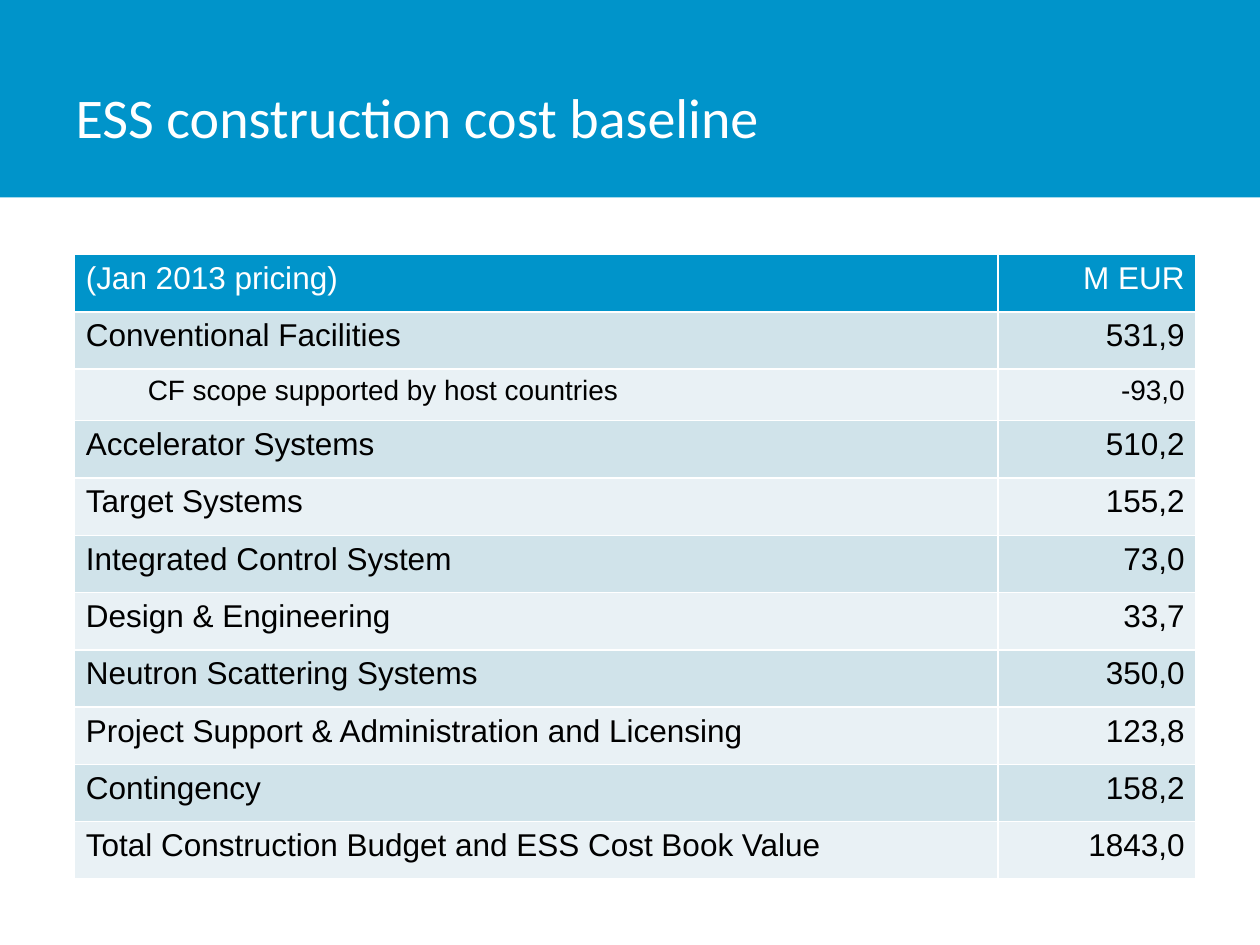
from lxml import etree
from pptx import Presentation
from pptx.dml.color import RGBColor
from pptx.enum import shapes, text
from pptx.oxml import ns
from pptx.util import Cm, Pt

COLORS = {
    "brand": "0094CA",
    "band_dark": "D0E3EA",
    "band_light": "E9F1F5",
    "white": "FFFFFF",
    "black": "000000",
}

COSTS = [
    ("(Jan 2013 pricing)", "M EUR"),
    ("Conventional Facilities", "531,9"),
    ("CF scope supported by host countries", "-93,0"),
    ("Accelerator Systems", "510,2"),
    ("Target Systems", "155,2"),
    ("Integrated Control System", "73,0"),
    ("Design & Engineering", "33,7"),
    ("Neutron Scattering Systems", "350,0"),
    ("Project Support & Administration and Licensing", "123,8"),
    ("Contingency", "158,2"),
    ("Total Construction Budget and ESS Cost Book Value", "1843,0"),
]
SUB_ITEM = 2
TABLE_HEIGHT = 12.59
SUB_HEIGHT = 1.04
ROW_HEIGHT = (TABLE_HEIGHT - SUB_HEIGHT) / (len(COSTS) - 1)


def rgb(name):
    return RGBColor.from_string(COLORS[name])


def add_borders(cell, name, width):
    """Line all four sides of a cell; call before filling it."""
    properties = cell._tc.get_or_add_tcPr()
    for side in ("lnL", "lnR", "lnT", "lnB"):
        line = etree.SubElement(properties, ns.qn(f"a:{side}"), w=str(width))
        fill = etree.SubElement(line, ns.qn("a:solidFill"))
        etree.SubElement(fill, ns.qn("a:srgbClr"), val=COLORS[name])


prs = Presentation()
prs.slide_width, prs.slide_height = Cm(25.4), Cm(19.05)
slide = prs.slides.add_slide(prs.slide_layouts[5])

# Title on its coloured band
band = slide.shapes.add_shape(
    shapes.MSO_SHAPE.RECTANGLE, 0, 0, prs.slide_width, Cm(3.98))
band.shadow.inherit = False
band.fill.solid()
band.fill.fore_color.rgb = rgb("brand")
band.line.fill.background()

title = slide.shapes.title
band._element.addnext(title._element)  # title in front of the band
title.left, title.top, title.width, title.height = Cm(1.27), Cm(0.76), Cm(19.84), Cm(3.18)
title.text_frame.text = "ESS construction cost baseline"
title.text_frame.vertical_anchor = text.MSO_ANCHOR.MIDDLE
heading = title.text_frame.paragraphs[0]
heading.alignment = text.PP_ALIGN.LEFT
heading.runs[0].font.name = "Calibri"
heading.runs[0].font.size = Pt(32)
heading.runs[0].font.color.rgb = rgb("white")

# Cost table
costs = slide.shapes.add_table(
    len(COSTS), 2, Cm(1.5), Cm(5.13), Cm(22.61), Cm(TABLE_HEIGHT)).table
costs.columns[0].width, costs.columns[1].width = Cm(18.62), Cm(3.99)

for row, entries in enumerate(COSTS):
    costs.rows[row].height = Cm(SUB_HEIGHT if row == SUB_ITEM else ROW_HEIGHT)
    if row == 0:
        fill_name = "brand"
    else:
        fill_name = "band_dark" if row % 2 else "band_light"
    for column, entry in enumerate(entries):
        cell = costs.cell(row, column)
        add_borders(cell, "white", Pt(1))
        cell.fill.solid()
        cell.fill.fore_color.rgb = rgb(fill_name)
        cell.margin_left = cell.margin_right = Cm(0.23)
        cell.margin_top = cell.margin_bottom = Cm(0.13)
        cell.text_frame.text = entry
        paragraph = cell.text_frame.paragraphs[0]
        if column == 1:
            paragraph.alignment = text.PP_ALIGN.RIGHT
        elif row == SUB_ITEM:
            paragraph.level = 1
            paragraph._p.get_or_add_pPr().set("marL", str(Cm(1.25)))
        font = paragraph.runs[0].font
        font.name = "Arial"
        font.size = Pt(16 if row == SUB_ITEM else 18)
        font.bold = False
        font.color.rgb = rgb("white" if row == 0 else "black")

prs.save("out.pptx")
